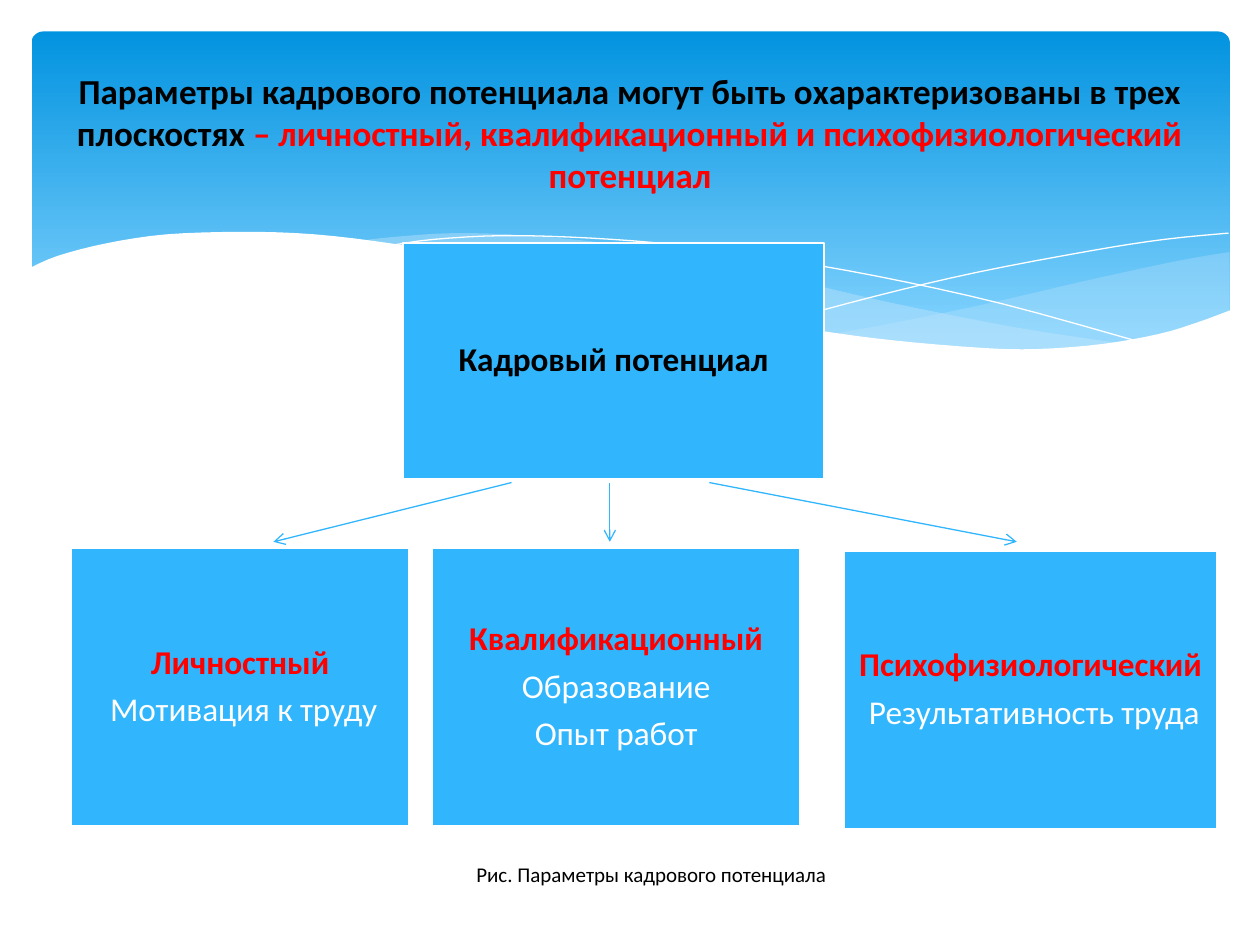
from dataclasses import dataclass
from typing import NamedTuple

from lxml import etree
from pptx import Presentation
from pptx import util as u
from pptx.dml.color import RGBColor
from pptx.enum import shapes, text
from pptx.oxml.ns import qn


@dataclass(frozen=True)
class Theme:
    font: str = "Calibri"
    box: str = "31B6FD"
    sky_top: str = "0293E0"
    sky_bottom: str = "83D3FE"
    haze: str = "C6E7FC"
    white: str = "FFFFFF"
    ink: str = "000000"
    accent: str = "FF0000"
    title_size: float = 20
    box_size: float = 19
    caption_size: float = 12


class Run(NamedTuple):
    text: str
    color: str
    bold: bool = False


class Box(NamedTuple):
    left: float
    top: float
    width: float
    height: float
    lines: list[Run]


class Arrow(NamedTuple):
    x1: float
    x2: float


Points = list[tuple[float, float]]
T = Theme()

# Wave outlines, as points that a smooth curve passes through
RIGHT_TOP: Points = [(9.76, 2), (9.35, 2.07), (8.61, 2.23), (7.79, 2.42), (7.06, 2.57), (6.61, 2.65)]
RIGHT_BASE: Points = [(6.61, 2.65), (7.05, 2.71), (7.57, 2.76), (8.03, 2.78), (8.54, 2.76),
                      (8.97, 2.7), (9.35, 2.62), (9.76, 2.47)]
MID_TOP: Points = [(8.93, 2.73), (8.07, 2.6), (7.06, 2.4), (6.29, 2.22), (5.55, 2.05), (4.89, 1.94),
                   (4.2, 1.87), (3.61, 1.85), (3.13, 1.88), (2.86, 1.91)]
MID_BASE: Points = [(2.86, 1.91), (3.62, 2.03), (4.49, 2.22), (5.3, 2.4), (6.18, 2.58), (6.95, 2.7),
                    (7.48, 2.76), (8.07, 2.78), (8.57, 2.77), (8.93, 2.73)]
FALLING: Points = [(3.09, 1.95), (3.44, 1.9), (4.01, 1.87), (4.69, 1.89), (5.33, 1.94), (6.08, 2.04),
                   (6.95, 2.19), (7.95, 2.41), (9.07, 2.72)]
RISING: Points = [(6.13, 2.57), (6.95, 2.35), (7.76, 2.16), (8.66, 1.99), (9.24, 1.9), (9.75, 1.85)]
WHITE_WAVE: Points = [(0.23, 2.13), (0.46, 2.03), (0.85, 1.93), (1.32, 1.86), (1.93, 1.84), (2.5, 1.86),
                      (3.16, 1.94), (3.91, 2.07), (4.47, 2.2), (5.03, 2.33), (5.79, 2.5), (6.48, 2.62),
                      (7.08, 2.7), (7.78, 2.76), (8.23, 2.77), (8.75, 2.73), (9.2, 2.65), (9.5, 2.56),
                      (9.77, 2.46)]

BOXES = [
    Box(3.2, 1.93, 3.34, 1.87, [Run("Кадровый потенциал", T.ink, True)]),
    Box(6.7, 4.37, 2.96, 2.21, [Run("Психофизиологический", T.accent, True),
                                Run(" Результативность труда", T.white)]),
    Box(0.56, 4.35, 2.69, 2.21, [Run("Личностный", T.accent, True),
                                 Run(" Мотивация к труду", T.white)]),
    Box(3.43, 4.35, 2.92, 2.21, [Run("Квалификационный", T.accent, True),
                                 Run(" Образование ", T.white),
                                 Run("Опыт работ", T.white)]),
]
ARROWS = [Arrow(4.06, 2.17), Arrow(4.84, 4.84), Arrow(5.63, 8.07)]
ARROW_TOP, ARROW_BOTTOM = 3.83, 4.3


def rgb(color: str) -> RGBColor:
    return RGBColor.from_string(color)


def paint(shape, color: str, alpha: int = 100) -> None:
    shape.fill.solid()
    shape.fill.fore_color.rgb = rgb(color)
    if alpha < 100:
        clr = shape.fill._xPr.find(".//" + qn("a:srgbClr"))
        etree.SubElement(clr, qn("a:alpha"), val=str(alpha * 1000))


def add_run(p, run: Run, size: float) -> None:
    r = p.add_run()
    r.text = run.text
    r.font.name, r.font.size, r.font.bold = T.font, u.Pt(size), run.bold
    r.font.color.rgb = rgb(run.color)


def smooth(points: Points, steps: int = 4) -> Points:
    """Catmull-Rom curve through the points."""
    padded = [points[0], *points, points[-1]]
    curve = [points[0]]
    for a, b, c, d in zip(padded, padded[1:], padded[2:], padded[3:]):
        for i in range(1, steps + 1):
            t = i / steps
            curve.append(tuple(
                0.5 * (2 * q + (v - o) * t + (2 * o - 5 * q + 4 * v - w) * t ** 2
                       + (3 * q - o - 3 * v + w) * t ** 3)
                for o, q, v, w in zip(a, b, c, d)))
    return curve


def add_outline(s, points: Points, closed: bool):
    start, *rest = [(u.Inches(x), u.Inches(y)) for x, y in points]
    builder = s.shapes.build_freeform(*start)
    builder.add_line_segments(rest, close=closed)
    sp = builder.convert_to_shape()
    sp.shadow.inherit = False
    return sp


def add_wave(s, points: Points, color: str, alpha: int = 100) -> None:
    sp = add_outline(s, points, True)
    paint(sp, color, alpha)
    sp.line.fill.background()


def add_hairline(s, points: Points) -> None:
    sp = add_outline(s, smooth(points), False)
    sp.fill.background()
    sp.line.color.rgb = rgb(T.white)
    sp.line.width = u.Pt(0)


def add_backdrop(s) -> None:
    sp = s.shapes.add_shape(shapes.MSO_SHAPE.ROUNDED_RECTANGLE, u.Inches(0.25), u.Inches(0.25),
                            u.Inches(9.51), u.Inches(2.7))
    sp.adjustments[0] = 0.034
    sp.shadow.inherit = False
    sp.line.fill.background()
    sp.fill.gradient()
    sp.fill.gradient_angle = 270
    for stop, color, position in zip(sp.fill.gradient_stops, (T.sky_top, T.sky_bottom), (0, 0.9)):
        stop.color.rgb = rgb(color)
        stop.position = position
    add_wave(s, smooth(RIGHT_TOP) + smooth(RIGHT_BASE), T.haze, 29)
    add_wave(s, smooth(MID_TOP) + smooth(MID_BASE), T.haze, 40)
    add_hairline(s, FALLING)
    add_hairline(s, RISING)
    add_wave(s, smooth(WHITE_WAVE) + [(9.77, 3.29), (0.23, 3.29)], T.white)


def add_box(s, box: Box) -> None:
    sp = s.shapes.add_shape(shapes.MSO_SHAPE.RECTANGLE, *map(u.Inches, box[:4]))
    sp.shadow.inherit = False
    paint(sp, T.box)
    sp.line.color.rgb = rgb(T.white)
    sp.line.width = u.Pt(1.25)
    tf = sp.text_frame
    tf.word_wrap = True
    tf.vertical_anchor = text.MSO_ANCHOR.MIDDLE
    tf.margin_left = tf.margin_right = tf.margin_top = tf.margin_bottom = u.Inches(0.08)
    for i, line in enumerate(box.lines):
        p = tf.add_paragraph() if i else tf.paragraphs[0]
        p.alignment = text.PP_ALIGN.CENTER
        p.line_spacing, p.space_after = 0.9, u.Pt(6.5)
        add_run(p, line, T.box_size)


def add_arrow(s, arrow: Arrow) -> None:
    cx = s.shapes.add_connector(shapes.MSO_CONNECTOR.STRAIGHT, u.Inches(arrow.x1), u.Inches(ARROW_TOP),
                                u.Inches(arrow.x2), u.Inches(ARROW_BOTTOM))
    cx.line.color.rgb = rgb(T.box)
    cx.line.width = u.Pt(0.75)
    etree.SubElement(cx.line._get_or_add_ln(), qn("a:tailEnd"), type="arrow")
    etree.SubElement(cx._element.spPr, qn("a:effectLst"))


def set_heading(shape, runs: list[Run], size: float) -> None:
    tf = shape.text_frame
    tf.word_wrap = True
    tf.auto_size = text.MSO_AUTO_SIZE.NONE
    tf.vertical_anchor = text.MSO_ANCHOR.MIDDLE
    p = tf.paragraphs[0]
    p.alignment = text.PP_ALIGN.CENTER
    for run in runs:
        add_run(p, run, size)


def main() -> None:
    prs = Presentation()
    prs.slide_width, prs.slide_height = u.Inches(10), u.Inches(7.5)
    s = prs.slides.add_slide(prs.slide_layouts[5])

    add_backdrop(s)
    for box in BOXES:
        add_box(s, box)

    # Title, brought in front of the backdrop
    title = s.shapes.title
    title.left, title.top, title.width, title.height = map(u.Inches, (0.5, 0.37, 9, 1.37))
    title._element.getparent().append(title._element)
    set_heading(title, [
        Run("Параметры кадрового потенциала могут быть охарактеризованы в трех плоскостях ", T.ink, True),
        Run("– личностный, квалификационный и психофизиологический потенциал", T.accent, True),
    ], T.title_size)

    # Caption
    caption = s.shapes.add_textbox(*map(u.Inches, (0.67, 6.58, 9, 0.71)))
    set_heading(caption, [Run("Рис. Параметры кадрового потенциала", T.ink)], T.caption_size)

    for arrow in ARROWS:
        add_arrow(s, arrow)
    prs.save("out.pptx")


if __name__ == "__main__":
    main()
